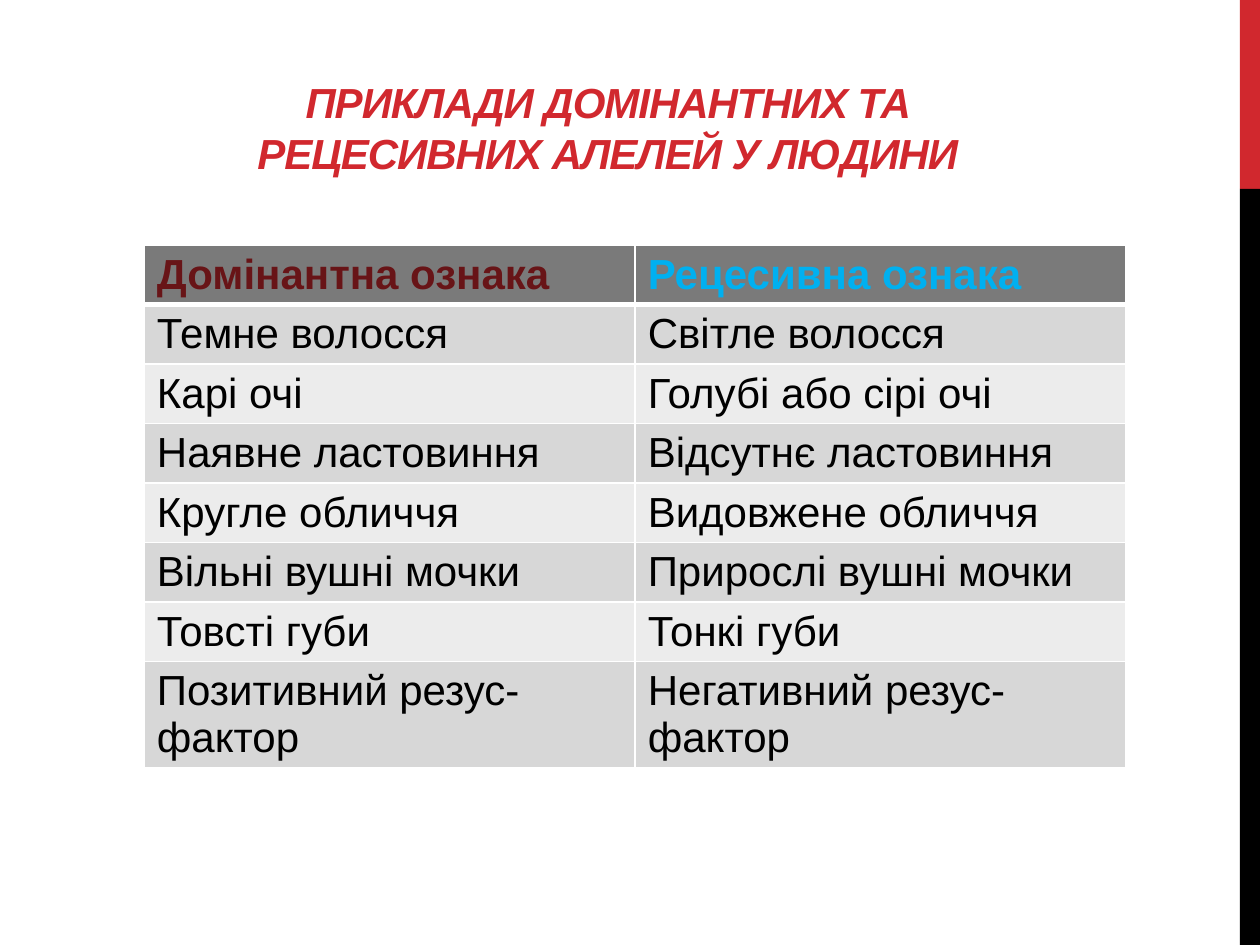
from pptx import Presentation
from pptx.dml.color import RGBColor
from pptx.enum.shapes import MSO_SHAPE
from pptx.enum.text import MSO_ANCHOR, MSO_AUTO_SIZE, PP_ALIGN
from pptx.oxml import parse_xml
from pptx.oxml.ns import nsdecls
from pptx.util import Pt

COLORS = {
    "red": "D1282E", "black": "000000", "white": "FFFFFF",
    "maroon": "681417", "blue": "00B0F0",
    "head": "7A7A7A", "dark": "D7D7D7", "light": "ECECEC",
}
TITLE = "ПРИКЛАДИ ДОМІНАНТНИХ ТА РЕЦЕСИВНИХ АЛЕЛЕЙ У ЛЮДИНИ"
TRAITS = [
    ("Домінантна ознака", "Рецесивна ознака"),
    ("Темне волосся", "Світле волосся"),
    ("Карі очі", "Голубі або сірі очі"),
    ("Наявне ластовиння", "Відсутнє ластовиння"),
    ("Кругле обличчя", "Видовжене обличчя"),
    ("Вільні вушні мочки", "Прирослі вушні мочки"),
    ("Товсті губи", "Тонкі губи"),
    ("Позитивний резус-фактор", "Негативний резус-фактор"),
]


def color(name):
    return RGBColor.from_string(COLORS[name])


def add_run(para, text, tint, bold=False, italic=False):
    run = para.add_run()
    run.text = text
    font = run.font
    font.name, font.size = "Arial", Pt(24)
    font.bold, font.italic = bold, italic
    font.color.rgb = color(tint)
    return run


def add_bar(slide, top, height, tint):
    bar = slide.shapes.add_shape(
        MSO_SHAPE.RECTANGLE, Pt(708.5), Pt(top), Pt(11.5), Pt(height))
    bar.shadow.inherit = False
    bar.fill.solid()
    bar.fill.fore_color.rgb = color(tint)
    bar.line.fill.background()


def set_title(slide):
    title = slide.shapes.title
    title.left, title.top = Pt(88), Pt(31.5)
    title.width, title.height = Pt(518.5), Pt(73.5)
    frame = title.text_frame
    frame.word_wrap = True
    frame.auto_size = MSO_AUTO_SIZE.NONE
    frame.vertical_anchor = MSO_ANCHOR.BOTTOM
    para = frame.paragraphs[0]
    para.alignment = PP_ALIGN.CENTER
    run = add_run(para, TITLE, "red", bold=True, italic=True)
    run.font._element.set("spc", "-60")


def set_border(cell, side, width):
    # Borders must come before the fill in the cell properties
    props = cell._tc.get_or_add_tcPr()
    props.append(parse_xml(
        f'<a:{side} {nsdecls("a")} w="{Pt(width)}"><a:solidFill>'
        f'<a:srgbClr val="{COLORS["white"]}"/></a:solidFill></a:{side}>'))


def fill_cell(cell, text, row, col):
    head = row == 0
    for side in ("lnL", "lnR", "lnT", "lnB"):
        thick = (head and side == "lnB") or (row == 1 and side == "lnT")
        set_border(cell, side, 3 if thick else 1)
    cell.fill.solid()
    shade = "head" if head else ("light", "dark")[row % 2]
    cell.fill.fore_color.rgb = color(shade)
    tint = ("maroon", "blue")[col] if head else "black"
    add_run(cell.text_frame.paragraphs[0], text, tint, bold=head)


def add_traits(slide):
    table = slide.shapes.add_table(
        len(TRAITS), 2, Pt(82.5), Pt(140), Pt(561), Pt(29.2 * len(TRAITS))).table
    for r, pair in enumerate(TRAITS):
        for c, text in enumerate(pair):
            fill_cell(table.cell(r, c), text, r, c)


def main():
    deck = Presentation()
    deck.slide_width, deck.slide_height = Pt(720), Pt(540)
    slide = deck.slides.add_slide(deck.slide_layouts[5])
    # Side stripe
    add_bar(slide, 0, 108, "red")
    add_bar(slide, 108, 432, "black")
    # Title and table of traits
    set_title(slide)
    add_traits(slide)
    deck.save("out.pptx")


if __name__ == "__main__":
    main()
